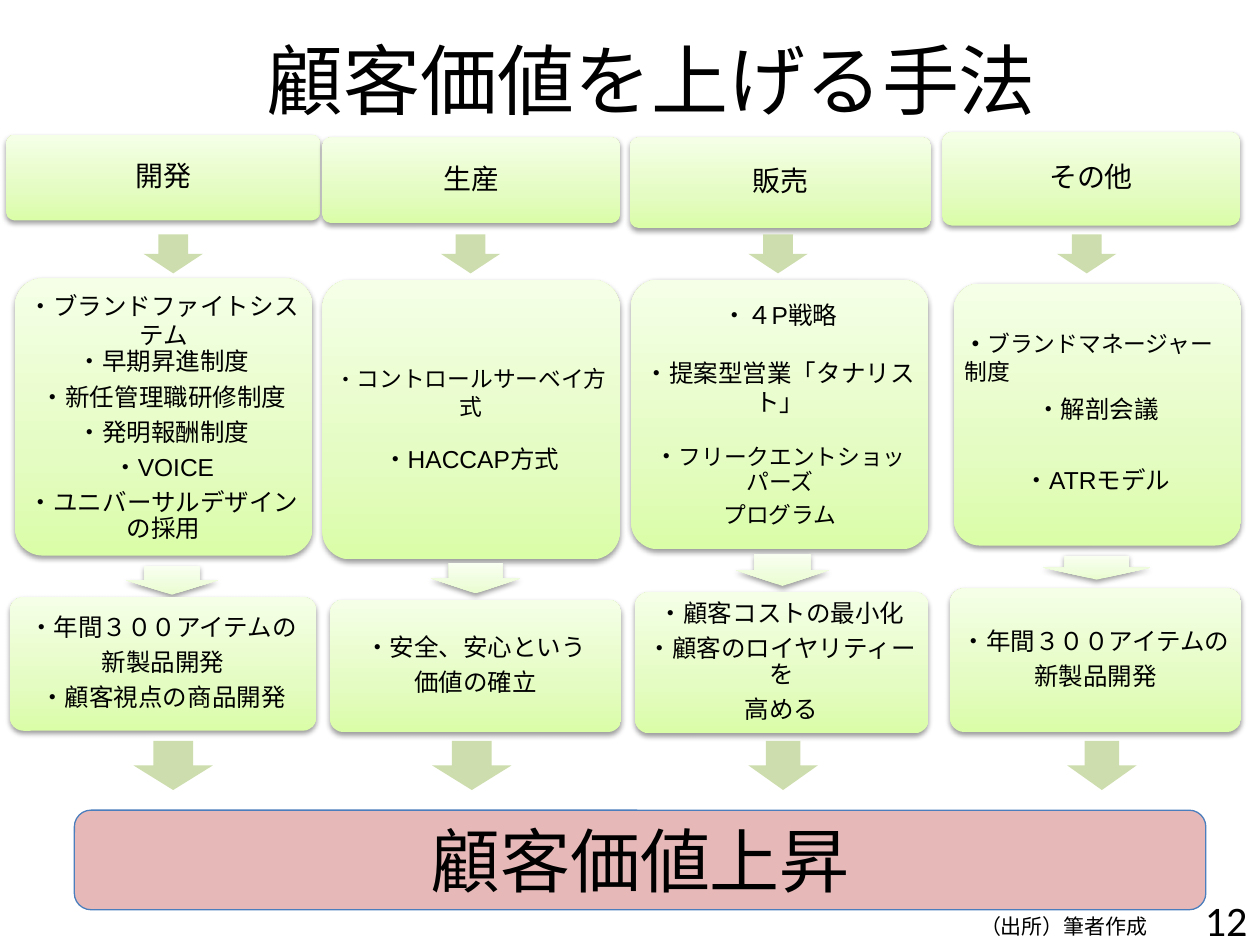
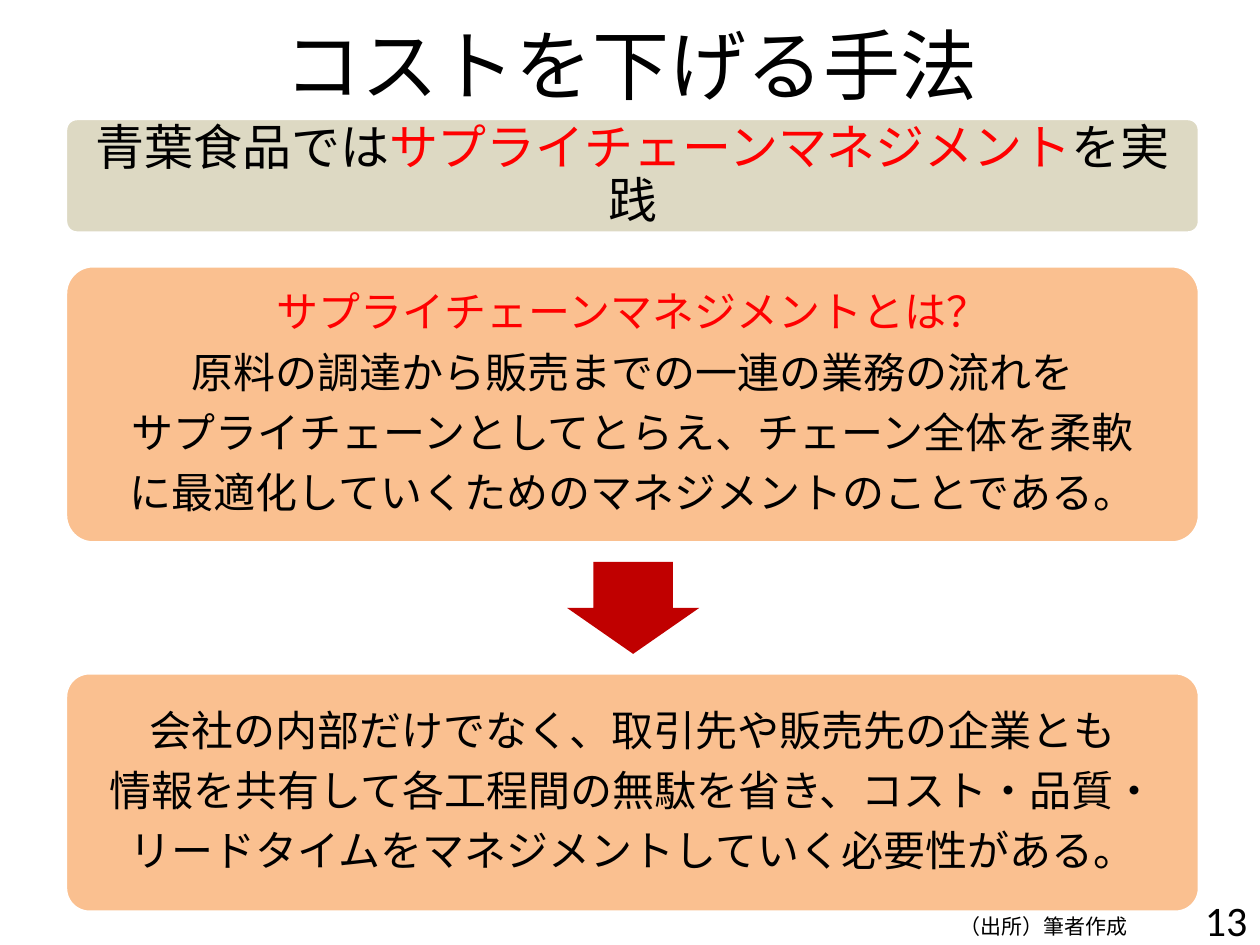
from lxml.etree import SubElement
from pptx import Presentation
from pptx.dml.color import RGBColor
from pptx.enum.shapes import MSO_SHAPE
from pptx.enum.text import MSO_ANCHOR, MSO_AUTO_SIZE, PP_ALIGN
from pptx.oxml.ns import qn
from pptx.util import Inches, Pt

BLACK, RED, WHITE = "000000", "FF0000", "FFFFFF"
GREEN_BOX = ((0, "DAFDA7"), (35, "E4FCC2"), (100, "F5FFE7"))
GREEN_ARROW = ((0, "E9FDCF"), (35, "EFFDDC"), (100, "F9FFF1"))
OLIVE, ROSE, BLUE = "C3D69B", "E6B9B8", "4B7EBC"
SAND, ORANGE, DARK_RED = "DDD9C3", "FAC090", "C00000"
CORNER = 0.1
BLANK_LINE = 16


def rgb(value):
    return RGBColor.from_string(value)


def set_all(obj, values):
    for name, value in values.items():
        setattr(obj, name, value)


def sub(parent, tag, **attrs):
    return SubElement(parent, qn(tag), {k: str(v) for k, v in attrs.items()})


class Deck:
    def __init__(self):
        self.prs = Presentation()
        set_all(self.prs, {"slide_width": Inches(10), "slide_height": Inches(7.5)})
        self.s = None

    def slide(self, title, box):
        self.s = self.prs.slides.add_slide(self.prs.slide_layouts[5])
        sp = self.s.shapes.title
        left, top, width, height = map(Inches, box)
        set_all(sp, {"left": left, "top": top, "width": width, "height": height})
        self.put_text(sp.text_frame, [title], 44)

    def put_text(self, tf, paras, size, font="Calibri", inset=None, tight=False,
                 align=PP_ALIGN.CENTER, anchor=MSO_ANCHOR.MIDDLE):
        """Each paragraph is a string, or a dict with runs and own spacing;
        a run is a string or (string, format values)."""
        set_all(tf, {"word_wrap": True, "auto_size": MSO_AUTO_SIZE.NONE,
                     "vertical_anchor": anchor})
        if inset is not None:
            for side in ("left", "top", "right", "bottom"):
                setattr(tf, f"margin_{side}", Inches(inset))
        for i, para in enumerate(paras):
            if not isinstance(para, dict):
                para = {"runs": [para]}
            p = tf.paragraphs[0] if i == 0 else tf.add_paragraph()
            p.alignment = align
            if para.get("tight", tight):
                set_all(p, {"line_spacing": 0.9, "space_after": Pt(0.35 * size)})
            if "before" in para:
                p.space_before = Pt(para["before"])
            for run in para["runs"]:
                text, style = (run, {}) if isinstance(run, str) else run
                r = p.add_run()
                r.text = text
                set_all(r.font, {"name": font, "size": Pt(style.get("size", size)),
                                 "bold": style.get("bold", False)})
                r.font.color.rgb = rgb(style.get("color", BLACK))

    def shape(self, kind, box, fill, line=None, adj=(), alpha=None):
        """A tuple as fill means gradient stops, which come with a soft shadow."""
        sp = self.s.shapes.add_shape(kind, *map(Inches, box))
        sp.shadow.inherit = False
        for i, value in enumerate(adj):
            sp.adjustments[i] = value
        if isinstance(fill, tuple):
            self.gradient(sp, fill)
        else:
            sp.fill.solid()
            sp.fill.fore_color.rgb = rgb(fill)
        if alpha:
            props = sp.element.spPr
            color = props.find(f"{qn('a:solidFill')}/{qn('a:srgbClr')}")
            sub(color, "a:alpha", val=alpha * 1000)
        if line:
            sp.line.color.rgb = rgb(line[0])
            sp.line.width = Pt(line[1])
        else:
            sp.line.fill.background()
        return sp

    def gradient(self, sp, stops):
        sp.fill.gradient()
        sp.fill.gradient_angle = 90
        props = sp.element.spPr
        gs_list = props.find(f"{qn('a:gradFill')}/{qn('a:gsLst')}")
        for gs in list(gs_list):
            gs_list.remove(gs)
        for pos, color in stops:
            sub(sub(gs_list, "a:gs", pos=pos * 1000), "a:srgbClr", val=color)
        shadow = sub(props.find(qn("a:effectLst")), "a:outerShdw", blurRad=Pt(3.1),
                     dist=Pt(1.6), dir=5400000, rotWithShape=0)
        sub(sub(shadow, "a:srgbClr", val=BLACK), "a:alpha", val=38000)

    def box(self, box, fill, paras, size, inset=0.06, line=None, font="Arial"):
        sp = self.shape(MSO_SHAPE.ROUNDED_RECTANGLE, box, fill, line, [CORNER])
        # The rounded corners already push the text inwards
        inset = max(0, inset - 0.29 * CORNER * min(box[2:]))
        self.put_text(sp.text_frame, paras, size, font, inset, tight=True)
        return sp

    def arrow(self, box, fill, adj=(), alpha=None):
        self.shape(MSO_SHAPE.DOWN_ARROW, box, fill, adj=adj, alpha=alpha)

    def text(self, box, paras, size, font="Arial", align=PP_ALIGN.LEFT,
             anchor=MSO_ANCHOR.TOP):
        tf = self.s.shapes.add_textbox(*map(Inches, box)).text_frame
        self.put_text(tf, paras, size, font, align=align, anchor=anchor)

    def footer(self, source_left, number):
        self.text((source_left, 7.2, 1.67, 0.3), ["（出所）筆者作成"], 12)
        self.text((7.67, 7.1, 2.33, 0.4), [number], 24, "Calibri",
                  PP_ALIGN.RIGHT, MSO_ANCHOR.MIDDLE)


def loose(*runs, **spacing):
    return {"runs": runs, "tight": False, **spacing}


COLUMNS = [
    {"head": ("開発", (0.05, 1.07, 2.49, 0.68)),
     "methods": ((0.12, 2.21, 2.36, 2.2),
                 [loose("・ブランドファイトシステム"), "・早期昇進制度",
                  "・新任管理職研修制度", "・発明報酬制度", "・VOICE",
                  "・ユニバーサルデザインの採用"]),
     "effects": ((0.08, 4.74, 2.43, 1.06),
                 ["・年間３００アイテムの", "新製品開発", "・顧客視点の商品開発"]),
     "arrows": ((1.14, 0.47), (1, 4.49, 0.73, 0.23), (1.06, 0.63))},
    {"head": ("生産", (2.56, 1.09, 2.36, 0.68)),
     "methods": ((2.56, 2.22, 2.36, 2.22),
                 [loose(("・", {"size": 12}), ("コントロールサーベイ方式", {"size": 13})),
                  {"runs": ["・HACCAP方式"], "before": BLANK_LINE}]),
     "effects": ((2.62, 4.76, 2.31, 1.05), ["・安全、安心という", "価値の確立"]),
     "arrows": ((3.5, 0.47), (3.42, 4.47, 0.71, 0.24), (3.43, 0.63))},
    {"head": ("販売", (5, 1.09, 2.39, 0.72)),
     "methods": ((5.01, 2.22, 2.36, 2.14),
                 [loose("・４P戦略"),
                  loose("・提案型営業「タナリスト」", before=BLANK_LINE),
                  {"runs": ["・", ("フリークエントショッパーズ", {"size": 13})],
                   "before": BLANK_LINE},
                  {"runs": [("プログラム", {"size": 13})]}]),
     "effects": ((5.04, 4.7, 2.33, 1.12),
                 ["・顧客コストの最小化", "・顧客のロイヤリティーを", "高める"]),
     "arrows": ((5.94, 0.47), (5.84, 4.4, 0.74, 0.25), (5.94, 0.55))},
    {"head": ("その他", (7.48, 1.05, 2.36, 0.74)),
     "methods": ((7.57, 2.25, 2.28, 2.08),
                 ["・解剖会議", {"runs": ["・ATRモデル"], "before": 20}]),
     "methods_top": 0.5,
     "effects": ((7.54, 4.67, 2.31, 1.14), ["・年間３００アイテムの", "新製品開発"]),
     "arrows": ((8.39, 0.47), (8.28, 4.41, 0.85, 0.19), (8.47, 0.55))},
]


def customer_value_slide(deck):
    deck.slide("顧客価値を上げる手法", (0.67, 0, 9, 1.25))
    for col in COLUMNS:
        name, head_box = col["head"]
        methods_box, methods = col["methods"]
        effects_box, effects = col["effects"]
        (upper_x, upper_w), middle, (lower_x, lower_w) = col["arrows"]
        deck.box(head_box, GREEN_BOX, [name], 16, 0.07, font="Calibri")
        deck.arrow((upper_x, 1.86, upper_w, 0.31), OLIVE, alpha=81)
        sp = deck.box(methods_box, GREEN_BOX, methods, 14)
        if "methods_top" in col:
            sp.text_frame.margin_top = Inches(col["methods_top"])
        deck.arrow(middle, GREEN_ARROW, (0.6, 0.5))
        deck.box(effects_box, GREEN_BOX, effects, 14, font="Calibri")
        deck.arrow((lower_x, 5.88, lower_w, 0.39), OLIVE, alpha=81)
    deck.text((7.56, 2.57, 2.32, 0.62),
              [loose(("・", {"bold": True}), "ブランドマネージャー制度")], 13)
    goal = deck.shape(MSO_SHAPE.ROUNDED_RECTANGLE, (0.59, 6.43, 8.98, 0.79),
                      ROSE, (BLUE, 0.75))
    deck.put_text(goal.text_frame, ["顧客価値上昇"], 40)
    deck.footer(7.68, "12")


def cost_slide(deck):
    deck.slide("コストを下げる手法", (0.51, 0, 9, 1.01))
    border = (WHITE, 2)
    red = {"color": RED}
    deck.box((0.52, 0.94, 9, 0.91), SAND,
             [{"runs": ["青葉食品では", ("サプライチェーンマネジメント", red), "を実践"]}],
             28, 0.12, border)
    deck.box((0.52, 2.11, 9, 2.2), ORANGE,
             [{"runs": [("サプライチェーンマネジメントとは？", red)]},
              "原料の調達から販売までの一連の業務の流れを",
              "サプライチェーンとしてとらえ、チェーン全体を柔軟",
              "に最適化していくためのマネジメントのことである。"],
             24, 0.1, border)
    deck.arrow((4.5, 4.46, 1.05, 0.73), DARK_RED, (0.6, 0.5))
    deck.box((0.52, 5.34, 9, 1.9), ORANGE,
             ["会社の内部だけでなく、取引先や販売先の企業とも",
              "情報を共有して各工程間の無駄を省き、コスト・品質・",
              "リードタイムをマネジメントしていく必要性がある。"],
             24, 0.1, border)
    deck.footer(7.52, "13")


def main():
    deck = Deck()
    customer_value_slide(deck)
    cost_slide(deck)
    deck.prs.save("out.pptx")


if __name__ == "__main__":
    main()
